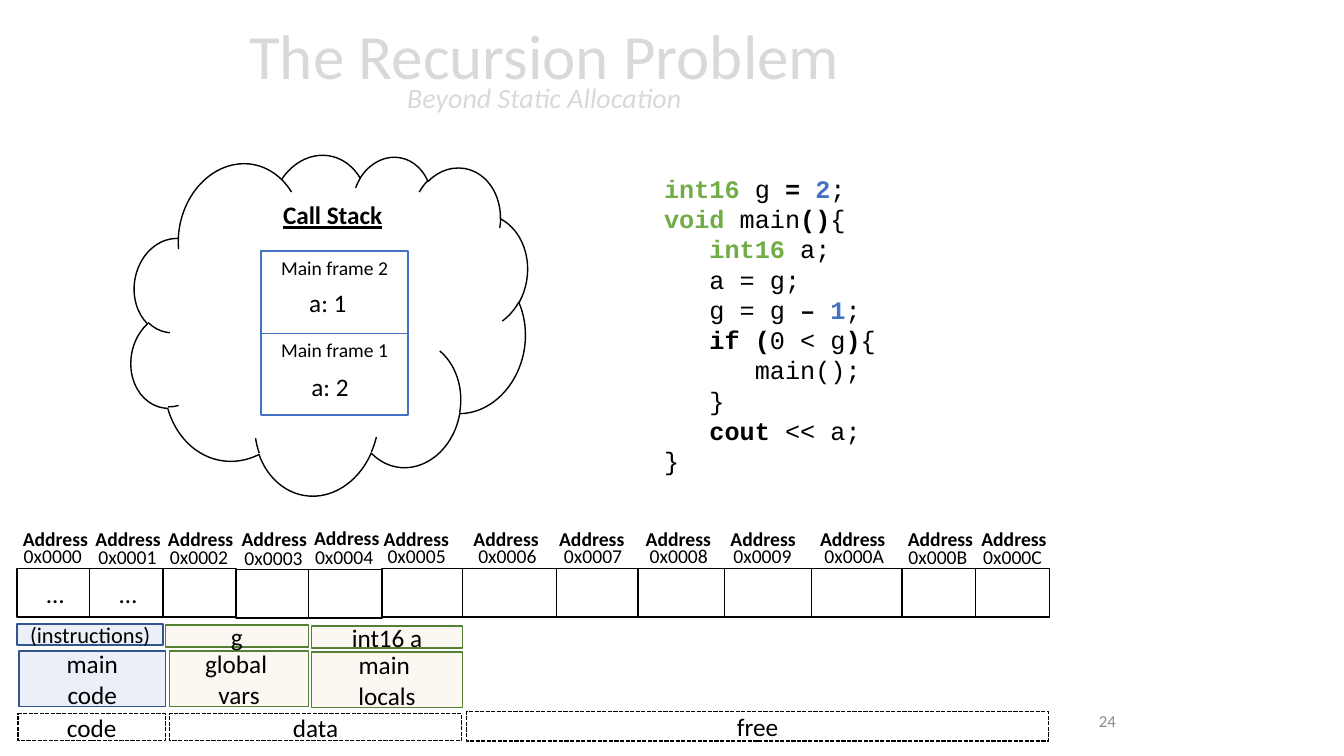
import dataclasses
import typing

import pptx
import pptx.dml.color
import pptx.enum.dml
import pptx.enum.shapes
import pptx.enum.text
import pptx.oxml
import pptx.oxml.ns
import pptx.util

Pt = pptx.util.Pt
Align = pptx.enum.text.PP_ALIGN
Anchor = pptx.enum.text.MSO_ANCHOR
Preset = pptx.enum.shapes.MSO_SHAPE


@dataclasses.dataclass(frozen=True)
class Theme:
    font: str = "Calibri"
    code_font: str = "Courier New"
    black: str = "000000"
    white: str = "FFFFFF"
    heading: str = "D9D9D9"
    muted: str = "8C8C8C"
    blue: str = "4472C4"
    dark_blue: str = "325491"
    orange: str = "F4B183"
    dark_green: str = "538035"
    green: str = "70AD47"
    title_size: float = 45
    subtitle_size: float = 20
    text_size: float = 18
    instruction_size: float = 16
    small_size: float = 14
    number_size: float = 12


THEME = Theme()


class Box(typing.NamedTuple):
    left: float
    top: float
    width: float
    height: float


class Run(typing.NamedTuple):
    text: str
    bold: bool = False
    color: str = THEME.black


class CodeLine(typing.NamedTuple):
    level: int
    runs: list[Run]


class MemoryCell(typing.NamedTuple):
    left: float
    label_left: float
    number_left: float
    number_top: float
    top: float = 406.1
    label_top: float = 373


class Region(typing.NamedTuple):
    text: str
    box: Box
    line: str = THEME.black
    fill: typing.Optional[str] = None
    size: float = THEME.text_size


def rgb(value: str):
    return pptx.dml.color.RGBColor.from_string(value)


def set_attributes(target, values: dict) -> None:
    for name, value in values.items():
        setattr(target, name, value)


def add_run(paragraph, text: str, size: float, color: str = THEME.black,
            font: str = THEME.font, **values) -> None:
    run = paragraph.add_run()
    run.text = text
    set_attributes(run.font, {"name": font, "size": Pt(size), **values})
    run.font.color.rgb = rgb(color)


def write(shape, text: str, size: float, align=Align.CENTER, anchor=Anchor.TOP,
          wrap: bool = True, side: float = 7.2, **values) -> None:
    frame = shape.text_frame
    set_attributes(frame, {"word_wrap": wrap, "vertical_anchor": anchor,
                           "margin_left": Pt(side), "margin_right": Pt(side)})
    for index, line in enumerate(text.split("\n")):
        paragraph = frame.add_paragraph() if index else frame.paragraphs[0]
        paragraph.alignment = align
        add_run(paragraph, line, size, **values)


def add_text(shapes, box: Box, text: str, size: float, **values):
    shape = shapes.add_textbox(*map(Pt, box))
    write(shape, text, size, **values)
    return shape


def add_box(shapes, box: Box, line: str, fill: typing.Optional[str] = THEME.white,
            preset=Preset.RECTANGLE):
    shape = shapes.add_shape(preset, *map(Pt, box))
    shape.shadow.inherit = False
    set_attributes(shape.line, {"width": Pt(1)})
    shape.line.color.rgb = rgb(line)
    if fill:
        shape.fill.solid()
        shape.fill.fore_color.rgb = rgb(fill)
    else:
        shape.fill.background()
    return shape


def add_region(shapes, region: Region) -> None:
    shape = add_box(shapes, region.box, region.line, region.fill)
    write(shape, region.text, region.size, anchor=Anchor.MIDDLE)
    if region.fill:
        color = shape.fill._xPr.find(".//" + pptx.oxml.ns.qn("a:srgbClr"))
        alpha = color.makeelement(pptx.oxml.ns.qn("a:alpha"), {"val": "10000"})
        color.append(alpha)
    else:
        shape.line.dash_style = pptx.enum.dml.MSO_LINE.SQUARE_DOT


def add_memory_cell(shapes, index: int, cell: MemoryCell, right: float) -> None:
    add_box(shapes, Box(cell.left, cell.top, right - cell.left, 34.6), THEME.black)
    add_text(shapes, Box(cell.label_left, cell.label_top, 56.2, 24.5), "Address",
             THEME.small_size, side=0, bold=True)
    add_text(shapes, Box(cell.number_left, cell.number_top, 45.4, 25.2),
             f"0x{index:04X}", THEME.small_size, side=0)


def add_code(shapes, box: Box, lines: list[CodeLine]) -> None:
    frame = shapes.add_textbox(*map(Pt, box)).text_frame
    frame.word_wrap = True
    for index, line in enumerate(lines):
        paragraph = frame.add_paragraph() if index else frame.paragraphs[0]
        indent = Pt(32.4 * line.level)
        paragraph._p.get_or_add_pPr().set("marL", str(int(indent)))
        for run in line.runs:
            add_run(paragraph, run.text, THEME.text_size, run.color,
                    THEME.code_font, bold=run.bold)


CELLS = [
    MemoryCell(12.2, 11.5, 15.1, 385.2),
    MemoryCell(64.1, 63.4, 68.4, 385.9),
    MemoryCell(116.6, 115.2, 119.5, 385.9),
    MemoryCell(168.5, 167.8, 172.8, 386.6, top=406.8),
    MemoryCell(220.3, 219.6, 223.2, 385.9, top=406.8, label_top=372.2),
    MemoryCell(272.9, 269.3, 275, 385.2),
    MemoryCell(330.5, 333.4, 339.8, 385.2),
    MemoryCell(397.4, 394.6, 401, 385.2),
    MemoryCell(455.8, 456.5, 462.2, 385.2),
    MemoryCell(517.7, 517, 522, 385.2),
    MemoryCell(579.6, 581, 587.5, 385.2),
    MemoryCell(644.4, 643.7, 647.3, 385.9),
    MemoryCell(697, 696.2, 700.6, 385.9),
]
MEMORY_RIGHT = 749.5

CODE_COLORS = (THEME.dark_blue, THEME.blue)
DATA_COLORS = (THEME.dark_green, THEME.orange)
REGIONS = [
    Region("code", Box(13, 509.8, 105.1, 19.4)),
    Region("data", Box(121, 509.8, 208.8, 19.4)),
    Region("free", Box(333.4, 508.3, 415.4, 20.9)),
    Region("main\ncode", Box(13.7, 465.1, 104.4, 39.6), *CODE_COLORS),
    Region("global \nvars", Box(121, 465.1, 99.4, 39.6), *DATA_COLORS),
    Region("main \nlocals", Box(222.5, 465.8, 108, 39.6), *DATA_COLORS),
    Region("(instructions)", Box(12.2, 445.7, 104.4, 15.1), *CODE_COLORS,
           size=THEME.instruction_size),
    Region("g", Box(118.1, 446.4, 102.2, 15.8), *DATA_COLORS),
    Region("int16 a", Box(222.5, 447.1, 108, 15.8), *DATA_COLORS),
]

CODE = [
    CodeLine(0, [Run("int16", True, THEME.green), Run(" g "), Run("= ", True),
                 Run("2", True, THEME.blue), Run(";")]),
    CodeLine(0, [Run("void", True, THEME.green), Run(" main"), Run("()", True), Run("{")]),
    CodeLine(1, [Run("int16", True, THEME.green), Run(" a;")]),
    CodeLine(1, [Run("a = g;")]),
    CodeLine(1, [Run("g = g "), Run("– ", True), Run("1", True, THEME.blue), Run(";")]),
    CodeLine(1, [Run("if (", True), Run("0 < g"), Run(")", True), Run("{")]),
    CodeLine(2, [Run("main();")]),
    CodeLine(1, [Run("}")]),
    CodeLine(1, [Run("cout", True), Run(" << a;")]),
    CodeLine(0, [Run("}")]),
]


def main() -> None:
    presentation = pptx.Presentation()
    set_attributes(presentation, {"slide_width": Pt(960), "slide_height": Pt(540)})
    slide = presentation.slides.add_slide(presentation.slide_layouts[5])
    shapes = slide.shapes

    # Title and slide number
    title = shapes.title
    set_attributes(title, {"left": Pt(0), "top": Pt(1.4),
                           "width": Pt(777.6), "height": Pt(104.4)})
    write(title, "The Recursion Problem", THEME.title_size, anchor=Anchor.MIDDLE,
          color=THEME.heading)
    title.text_frame.auto_size = pptx.enum.text.MSO_AUTO_SIZE.NONE
    heading = title.text_frame.paragraphs[0]
    heading.line_spacing = 0.7
    heading.add_line_break()
    add_run(heading, "Beyond Static Allocation", THEME.subtitle_size, THEME.heading,
            italic=True)
    add_text(shapes, Box(588.2, 500.4, 216, 28.8), "24", THEME.number_size,
             align=Align.RIGHT, anchor=Anchor.MIDDLE, color=THEME.muted)

    # Memory strip and its regions
    rights = [cell.left for cell in CELLS[1:]] + [MEMORY_RIGHT]
    for index, (cell, right) in enumerate(zip(CELLS, rights)):
        add_memory_cell(shapes, index, cell, right)
    for cell in CELLS[:2]:
        add_text(shapes, Box(cell.left + 14, 409.7, 27.4, 28.8), "…", THEME.text_size,
                 align=Align.LEFT, wrap=False)
    for region in REGIONS:
        add_region(shapes, region)

    # Program
    add_code(shapes, Box(467.3, 120.2, 177.1, 225.4), CODE)

    # Call stack in its cloud
    cloud = add_box(shapes, Box(93.6, 105.1, 282.2, 249.1), THEME.black, preset=Preset.CLOUD)
    cloud.rotation = 9.4
    add_text(shapes, Box(195.1, 139, 86.4, 28.8), "Call Stack", THEME.text_size,
             align=Align.LEFT, wrap=False, bold=True, underline=True)
    for number, value, top, value_box in ((1, 2, 237.6, Box(215.3, 261.4, 41.8, 28.8)),
                                          (2, 1, 179.3, Box(213.8, 201.6, 41.8, 28.8))):
        group = shapes.add_group_shape().shapes
        frame = add_box(group, Box(186.5, top, 105.1, 59), THEME.blue)
        write(frame, f"Main frame {number}", THEME.small_size)
        add_text(group, value_box, f"a: {value}", THEME.text_size,
                 align=Align.LEFT, wrap=False)

    presentation.save("out.pptx")


if __name__ == "__main__":
    main()
